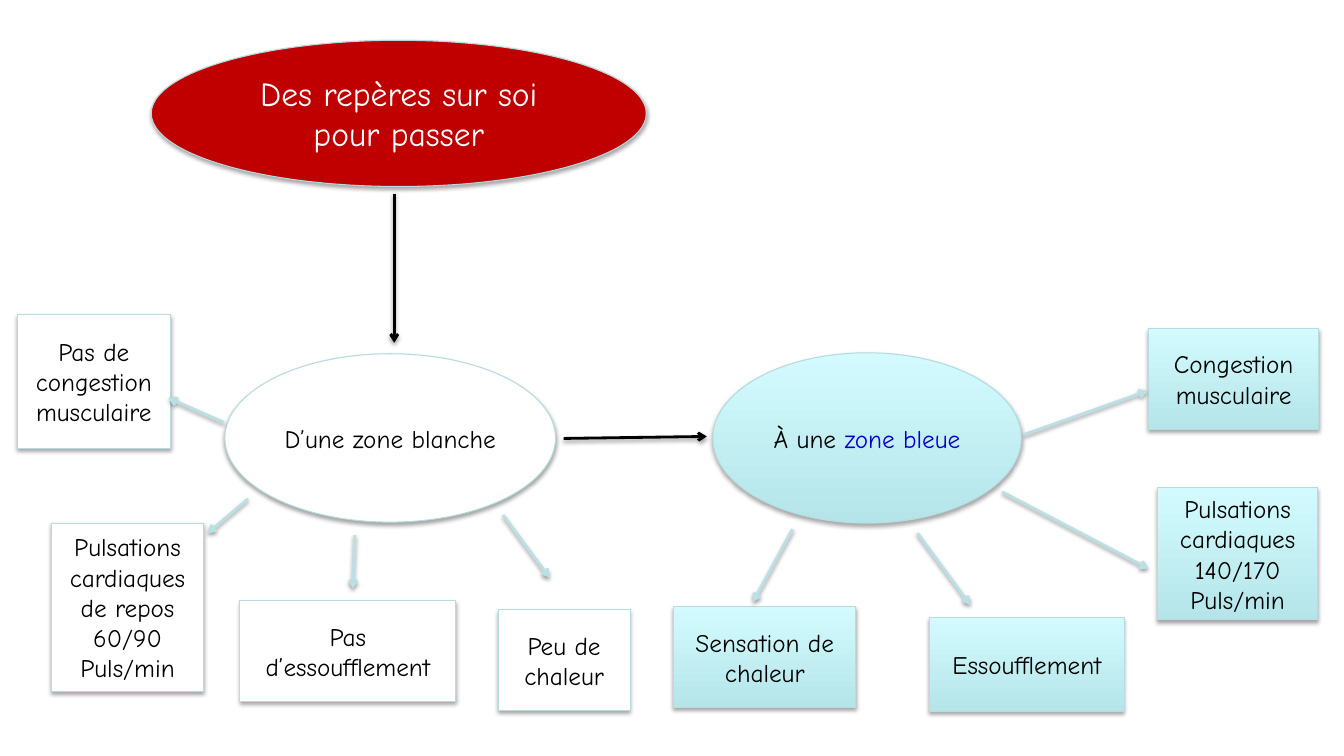
from lxml import etree
from pptx import Presentation
from pptx.dml.color import RGBColor
from pptx.enum.shapes import MSO_CONNECTOR, MSO_SHAPE
from pptx.enum.text import MSO_ANCHOR, PP_ALIGN
from pptx.oxml.ns import qn
from pptx.util import Inches, Pt

OVAL, RECTANGLE = MSO_SHAPE.OVAL, MSO_SHAPE.RECTANGLE
STRAIGHT = MSO_CONNECTOR.STRAIGHT
MIDDLE, CENTER = MSO_ANCHOR.MIDDLE, PP_ALIGN.CENTER

RED = RGBColor(0xC0, 0x00, 0x00)
WHITE = RGBColor(0xFF, 0xFF, 0xFF)
BLACK = RGBColor(0x00, 0x00, 0x00)
ACCENT_BLUE = RGBColor(0x00, 0x00, 0xCC)
PALE_BLUE = RGBColor(0xD3, 0xFB, 0xFF)
DEEP_BLUE = RGBColor(0xB5, 0xE5, 0xE9)
OUTLINE = RGBColor(0xB6, 0xDC, 0xDF)
ARROW_BLUE = RGBColor(0xBB, 0xE0, 0xE3)
FONT = "Comic Neue"

WHITE_SIGNS = [
    ("Pas de congestion musculaire", (-2.06, -0.39, 1.52, 1.33), (-0.01, 0.68, -0.56, 0.44)),
    ("Pulsations cardiaques de repos 60/90 Puls/min", (-1.72, 1.68, 1.51, 1.67), (0.23, 1.44, -0.17, 1.78)),
    ("Pas d’essoufflement", (0.15, 2.45, 2.14, 1), (1.29, 1.8, 1.27, 2.33)),
    ("Peu de chaleur", (2.71, 2.54, 1.31, 1), (2.76, 1.6, 3.22, 2.22)),
]
BLUE_SIGNS = [
    ("Sensation de chaleur", (-0.39, 2.52, 1.81, 1), (0.79, 1.75, 0.4, 2.47)),
    ("Essoufflement", (2.15, 2.63, 1.93, 0.93), (2.03, 1.79, 2.55, 2.5)),
    ("Pulsations cardiaques 140/170\nPuls/min", (4.41, 1.34, 1.59, 1.31), (2.87, 1.38, 4.32, 2.14)),
    ("Congestion musculaire", (4.32, -0.24, 1.69, 1), (3.09, 0.81, 4.31, 0.38)),
]


def add_shadow(effects, distance, opacity):
    """Put a soft downward shadow in an effect list."""
    shadow = etree.SubElement(effects, qn("a:outerShdw"), blurRad=str(Pt(3.1)), dist=str(Pt(distance)),
                              dir="5400000", rotWithShape="0")
    black = etree.SubElement(shadow, qn("a:srgbClr"), val="000000")
    etree.SubElement(black, qn("a:alpha"), val=str(opacity * 1000))


def style_run(run, size, color):
    """Give a run its font, size and colour."""
    run.font.name = FONT
    run.font.size = Pt(size)
    run.font.color.rgb = color


def add_node(slide, kind, box, text, fill, size=18, color=BLACK):
    """Draw a labelled shape; a pair of colours as fill gives a vertical gradient."""
    node = slide.shapes.add_shape(kind, *map(Inches, box))
    if isinstance(fill, RGBColor):
        node.fill.solid()
        node.fill.fore_color.rgb = fill
    else:
        node.fill.gradient()
        node.fill.gradient_angle = 90
        for stop, shade in zip(node.fill.gradient_stops, fill):
            stop.color.rgb = shade
    node.line.color.rgb = OUTLINE
    node.line.width = Pt(0.75)
    node.shadow.inherit = False
    add_shadow(node.element.spPr.find(qn("a:effectLst")), 1.8, 35)
    frame = node.text_frame
    frame.word_wrap = True
    frame.vertical_anchor = MIDDLE
    frame.text = text
    for paragraph in frame.paragraphs:
        paragraph.alignment = CENTER
        for run in paragraph.runs:
            style_run(run, size, color)
    return node


def add_arrow(slide, ends, color):
    """Draw an arrow from the first point to the second."""
    arrow = slide.shapes.add_connector(STRAIGHT, *map(Inches, ends))
    arrow.line.color.rgb = color
    arrow.line.width = Pt(2)
    properties = arrow.element.spPr
    etree.SubElement(properties.find(qn("a:ln")), qn("a:tailEnd"), type="arrow")
    add_shadow(etree.SubElement(properties, qn("a:effectLst")), 1.6, 38)


def add_zone(slide, box, text, fill, signs):
    """Draw a zone's oval with its signs and arrows offset from its corner."""
    left, top = box[:2]
    oval = add_node(slide, OVAL, box, text, fill)
    for sign, (dx, dy, width, height), (x1, y1, x2, y2) in signs:
        add_node(slide, RECTANGLE, (left + dx, top + dy, width, height), sign, fill)
        add_arrow(slide, (left + x1, top + y1, left + x2, top + y2), ARROW_BLUE)
    return oval


def main():
    """Build the diagram of the white and blue zones."""
    deck = Presentation()
    deck.slide_width, deck.slide_height = Inches(13.33), Inches(7.5)
    slide = deck.slides.add_slide(deck.slide_layouts[6])
    add_node(slide, OVAL, (1.5, 0.4, 4.91, 1.45), "Des repères sur soi\npour passer", RED, 24, WHITE)
    add_zone(slide, (2.23, 3.51, 3.28, 1.67), "D’une zone blanche", WHITE, WHITE_SIGNS)
    blue_zone = add_zone(slide, (7.07, 3.5, 3.06, 1.69), "À une ", (DEEP_BLUE, PALE_BLUE), BLUE_SIGNS)
    zone_name = blue_zone.text_frame.paragraphs[0].add_run()
    zone_name.text = "zone bleue"
    style_run(zone_name, 18, ACCENT_BLUE)
    add_arrow(slide, (3.91, 1.92, 3.91, 3.4), BLACK)
    add_arrow(slide, (5.59, 4.35, 7.01, 4.33), BLACK)
    deck.save("out.pptx")


if __name__ == "__main__":
    main()
